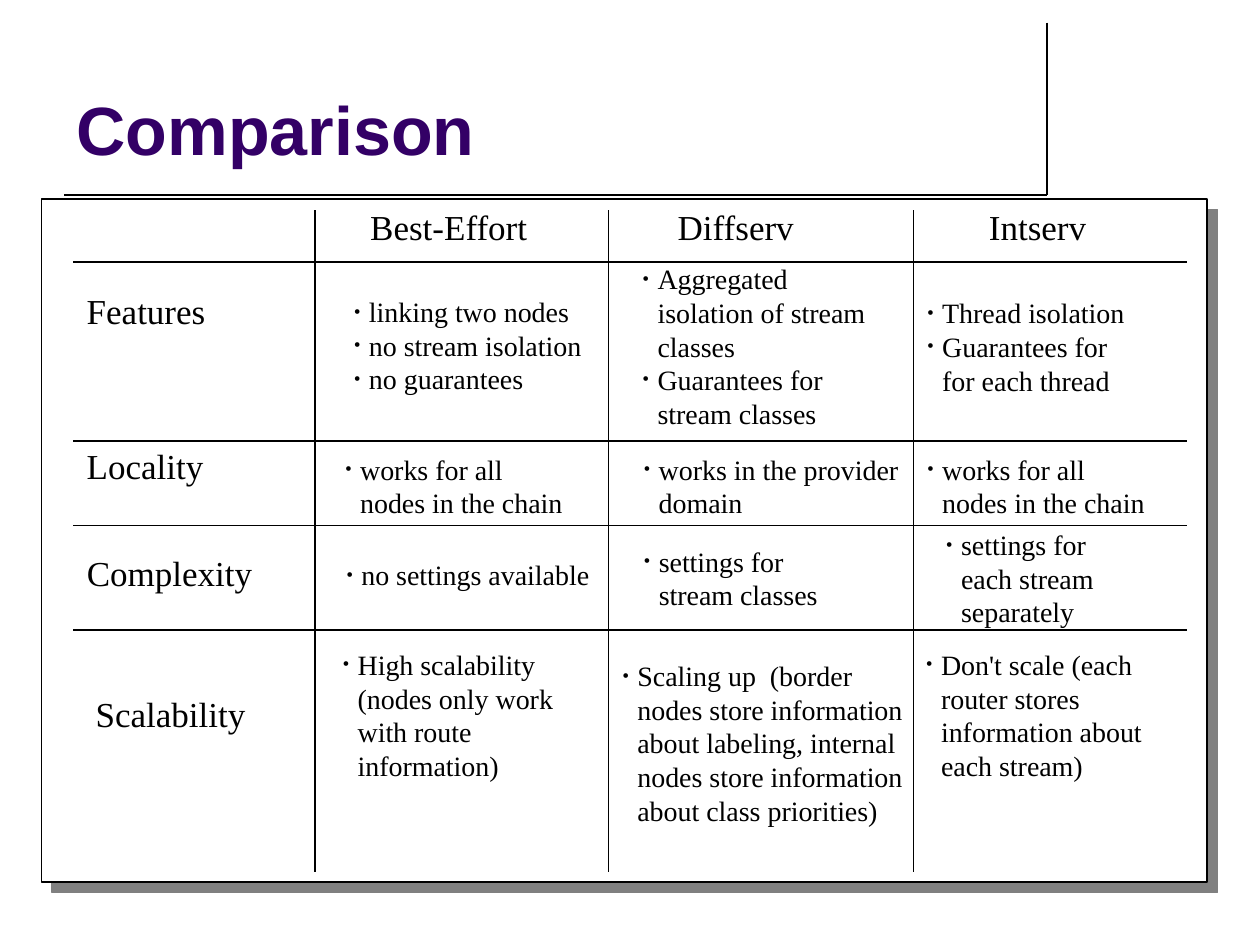
from lxml import etree
from pptx import Presentation
from pptx.dml.color import RGBColor
from pptx.enum.shapes import MSO_CONNECTOR, MSO_SHAPE
from pptx.enum.text import MSO_ANCHOR, PP_ALIGN
from pptx.oxml import parse_xml
from pptx.oxml.ns import nsdecls, qn
from pptx.util import Inches, Pt

STRAIGHT = MSO_CONNECTOR.STRAIGHT
RECTANGLE = MSO_SHAPE.RECTANGLE
TOP = MSO_ANCHOR.TOP
BOTTOM = MSO_ANCHOR.BOTTOM
LEFT = PP_ALIGN.LEFT

BLACK = RGBColor(0x00, 0x00, 0x00)
WHITE = RGBColor(0xFF, 0xFF, 0xFF)
PURPLE = RGBColor(0x33, 0x00, 0x66)

SERIF = "Times New Roman"
SANS = "Arial"
BULLET_INDENT = 0.12

GRID_LEFT, GRID_RIGHT = 0.58, 9.42
GRID_TOP, GRID_BOTTOM = 1.67, 6.92
COLUMN_RULES = [2.5, 4.83, 7.25]
ROW_RULES = [2.08, 3.5, 4.17, 5]

# Labels: left, top, width, height, text
HEADINGS = [
    (0.59, 2.25, 1.14, 0.44, "Features"),
    (0.59, 3.48, 1.7, 0.44, "Locality"),
    (0.59, 4.33, 1.51, 0.44, "Complexity"),
    (0.66, 5.45, 1.38, 0.77, "Scalability"),
    (2.84, 1.58, 1.44, 0.44, "Best-Effort"),
    (5.28, 1.58, 1.12, 0.44, "Diffserv"),
    (7.75, 1.58, 0.97, 0.44, "Intserv"),
]

# Cells: left, top, width, height, wraps, bullet items (\v breaks a line)
BEST_EFFORT = [
    (2.71, 2.29, 2.01, 0.94, True,
     ["linking two nodes", "no stream isolation", "no guarantees"]),
    (2.64, 3.54, 1.93, 0.64, False, ["works for all\vnodes in the chain"]),
    (2.65, 4.38, 1.54, 0.37, False, ["no settings available"]),
    (2.62, 5.09, 2.21, 1.7, True,
     ["High scalability\v(nodes only work with route information)"]),
]
DIFFSERV = [
    (5, 2.03, 2.08, 1.43, True,
     ["Aggregated isolation of stream classes",
      "Guarantees for stream classes"]),
    (5.01, 3.54, 2.23, 0.37, False, ["works in the provider \vdomain"]),
    (5.01, 4.27, 1.58, 0.64, False, ["settings for\vstream classes"]),
    (4.84, 5.18, 2.49, 1.7, True,
     ["Scaling up  (border nodes store information about labeling, "
      "internal nodes store information about class priorities)"]),
]
INTSERV = [
    (7.26, 2.3, 2.03, 0.9, False,
     ["Thread isolation", "Guarantees for \vfor each thread"]),
    (7.26, 3.54, 1.93, 0.64, False, ["works for all\vnodes in the chain"]),
    (7.41, 4.14, 1.97, 0.9, True,
     ["settings for \veach stream \vseparately"]),
    (7.25, 5.09, 2.21, 1.7, True,
     ["Don't scale (each router stores information about each stream)"]),
]


def add_bullet(paragraph):
    properties = paragraph._p.get_or_add_pPr()
    properties.set("marL", str(Inches(BULLET_INDENT)))
    properties.set("indent", str(-Inches(BULLET_INDENT)))
    color = etree.SubElement(properties, qn("a:buClr"))
    etree.SubElement(color, qn("a:srgbClr")).set("val", str(BLACK))
    etree.SubElement(properties, qn("a:buSzPct")).set("val", "70000")
    etree.SubElement(properties, qn("a:buFont")).set("typeface", SERIF)
    etree.SubElement(properties, qn("a:buChar")).set("char", "•")


def fill_text(shape, paragraphs, *, size, font=SERIF, color=BLACK, bold=False,
              bullets=False, anchor=TOP, wraps=True):
    frame = shape.text_frame
    frame.word_wrap = wraps
    frame.vertical_anchor = anchor
    for index, text in enumerate(paragraphs):
        paragraph = frame.add_paragraph() if index else frame.paragraphs[0]
        if bullets:
            add_bullet(paragraph)
        paragraph.alignment = LEFT
        paragraph.text = text
        for run in paragraph.runs:
            run.font.name = font
            run.font.size = Pt(size)
            run.font.bold = bold
            run.font.color.rgb = color


def add_outline(slide, left, top, width, height):
    """Invisible four-sided freeform that holds the text of one cell."""
    right, bottom = left + width, top + height
    builder = slide.shapes.build_freeform(Inches(left), Inches(top))
    builder.add_line_segments([(Inches(x), Inches(y)) for x, y in (
        (right, top), (right, bottom), (left, bottom))])
    outline = builder.convert_to_shape()
    outline.fill.background()
    outline.line.fill.background()
    outline.shadow.inherit = False
    return outline


def add_line(slide, x1, y1, x2, y2, weight=0.75):
    line = slide.shapes.add_connector(STRAIGHT, Inches(x1), Inches(y1),
                                      Inches(x2), Inches(y2))
    line.line.color.rgb = BLACK
    line.line.width = Pt(weight)
    etree.SubElement(line._element.spPr, qn("a:effectLst"))


def add_panel(slide):
    """White panel with a hard grey shadow to the lower right."""
    panel = slide.shapes.add_shape(RECTANGLE, Inches(0.33), Inches(1.58),
                                   Inches(9.25), Inches(5.42))
    panel.fill.solid()
    panel.fill.fore_color.rgb = WHITE
    panel.line.color.rgb = BLACK
    panel.line.width = Pt(0.75)
    panel.shadow.inherit = False
    effects = panel._element.spPr.find(qn("a:effectLst"))
    effects.append(parse_xml(
        f'<a:outerShdw {nsdecls("a")} dist="{Pt(8.5)}" dir="2700000" '
        'algn="ctr" rotWithShape="0"><a:srgbClr val="808080"/></a:outerShdw>'))


def add_title(slide):
    title = slide.shapes.add_textbox(Inches(0.51), Inches(0.13),
                                     Inches(7.8), Inches(1.26))
    fill_text(title, ["Comparison"], size=39, font=SANS, color=PURPLE,
              bold=True, anchor=BOTTOM)


def add_grid(slide):
    for y in ROW_RULES:
        add_line(slide, GRID_LEFT, y, GRID_RIGHT, y)
    for x in COLUMN_RULES:
        add_line(slide, x, GRID_TOP, x, GRID_BOTTOM)


def main():
    presentation = Presentation()
    presentation.slide_width = Inches(10)
    presentation.slide_height = Inches(7.5)
    slide = presentation.slides.add_slide(presentation.slide_layouts[6])

    add_line(slide, 8.31, 0.18, 8.31, 1.55, weight=1)
    add_line(slide, 0.51, 1.55, 8.31, 1.55, weight=1)
    add_panel(slide)
    add_title(slide)
    for *place, label in HEADINGS:
        fill_text(add_outline(slide, *place), [label], size=20, wraps=False)
    for *place, wraps, items in BEST_EFFORT + DIFFSERV + INTSERV:
        fill_text(add_outline(slide, *place), items, size=16, bullets=True,
                  wraps=wraps)
    add_grid(slide)
    presentation.save("out.pptx")


if __name__ == "__main__":
    main()
